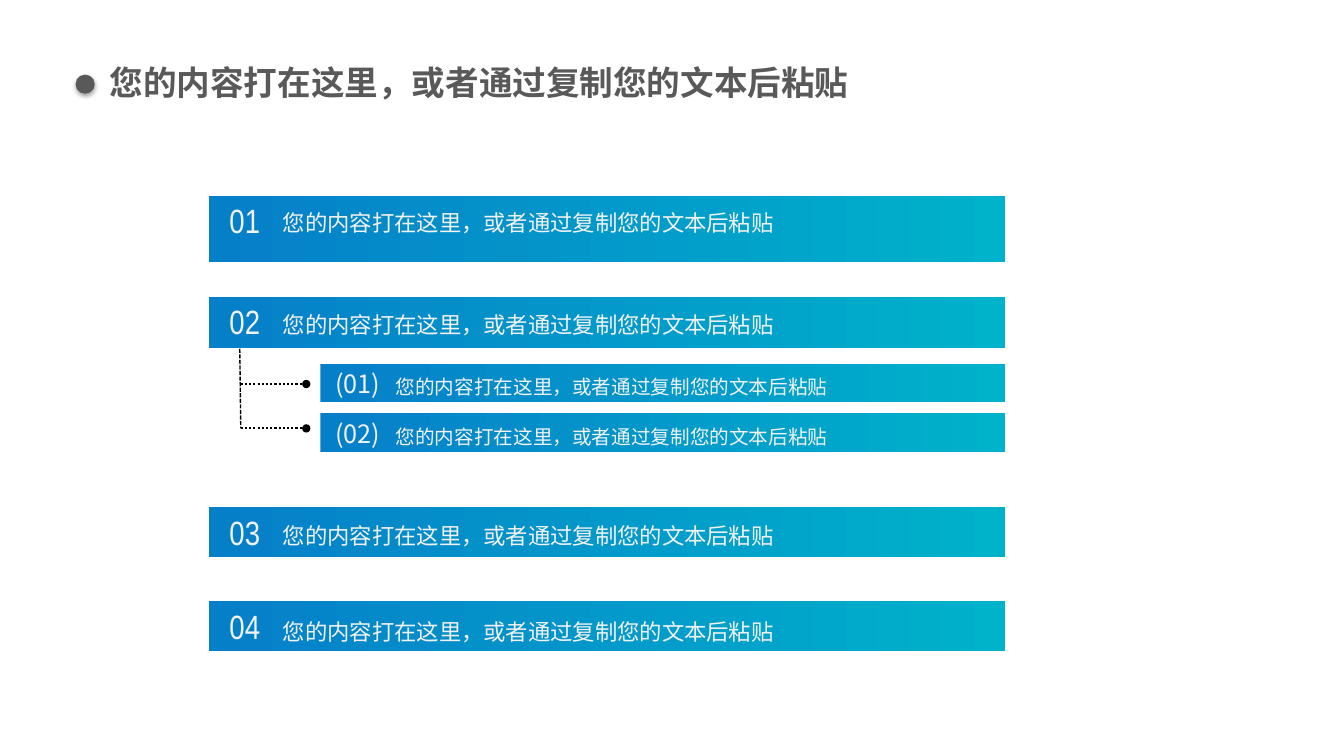
from lxml import etree
from pptx import Presentation
from pptx.dml.color import RGBColor
from pptx.enum.dml import MSO_LINE
from pptx.enum.shapes import MSO_CONNECTOR, MSO_SHAPE
from pptx.enum.text import MSO_AUTO_SIZE, PP_ALIGN
from pptx.oxml.ns import qn
from pptx.util import Pt

PX = 9144  # 100 px to the inch
RECT, OVAL = MSO_SHAPE.RECTANGLE, MSO_SHAPE.OVAL
STRAIGHT = MSO_CONNECTOR.STRAIGHT
DOTTED, DASHED = MSO_LINE.ROUND_DOT, MSO_LINE.SQUARE_DOT
CENTER, LEFT = PP_ALIGN.CENTER, PP_ALIGN.LEFT
GROW = MSO_AUTO_SIZE.SHAPE_TO_FIT_TEXT

COLORS = {"blue": "067FC9", "teal": "00B2CA", "pale": "F2F2F2",
          "gray": "595959", "black": "000000"}
SANS, NARROW = "Noto Sans CJK SC", "Arial Narrow"
SENTENCE = "您的内容打在这里，或者通过复制您的文本后粘贴"


def rgb(name):
    return RGBColor.from_string(COLORS[name])


def write(frame, text, size, font=SANS, color="pale", bold=False,
          align=LEFT, spacing=None):
    paragraph = frame.paragraphs[0]
    paragraph.alignment = align
    if spacing:
        paragraph.line_spacing = Pt(spacing)
    run = paragraph.add_run()
    run.text = text
    run.font.size, run.font.bold = Pt(size), bold
    run.font.color.rgb = rgb(color)
    run.font.name = font
    etree.SubElement(run.font._element, qn("a:ea"), typeface=font)


class Deck:
    def __init__(self, width, height):
        self.deck = Presentation()
        self.deck.slide_width, self.deck.slide_height = width * PX, height * PX
        self.slide = self.deck.slides.add_slide(self.deck.slide_layouts[6])

    def shape(self, kind, *box):
        shape = self.slide.shapes.add_shape(kind, *(n * PX for n in box))
        shape.shadow.inherit = False
        shape.line.fill.background()
        return shape

    def bar(self, *box):
        fill = self.shape(RECT, *box).fill
        fill.gradient()
        fill.gradient_angle = 0
        for stop, color in zip(fill.gradient_stops, ("blue", "teal")):
            stop.color.rgb = rgb(color)

    def bullet(self, *box):
        dot = self.shape(OVAL, *box)
        dot.fill.solid()
        dot.fill.fore_color.rgb = rgb("gray")
        effects = dot._element.spPr.find(qn("a:effectLst"))
        shadow = etree.SubElement(effects, qn("a:outerShdw"), blurRad=str(Pt(3.1)),
                                  dist=str(Pt(1.8)), dir="5400000", rotWithShape="0")
        tint = etree.SubElement(shadow, qn("a:srgbClr"), val=COLORS["black"])
        etree.SubElement(tint, qn("a:alpha"), val="35000")

    def text(self, left, top, width, height, text, **style):
        box = self.slide.shapes.add_textbox(*(n * PX for n in (left, top, width, height)))
        box.text_frame.word_wrap = True
        box.text_frame.auto_size = GROW
        write(box.text_frame, text, **style)

    def line(self, *ends, width, dash, dot_end=False):
        link = self.slide.shapes.add_connector(STRAIGHT, *(n * PX for n in ends))
        link.line.color.rgb = rgb("black")
        link.line.width = Pt(width)
        link.line.dash_style = dash
        if dot_end:
            etree.SubElement(link.line._get_or_add_ln(), qn("a:tailEnd"), type="oval")
        etree.SubElement(link._element.spPr, qn("a:effectLst"))

    def save(self):
        self.deck.save("out.pptx")


def main():
    page = Deck(1334, 750)

    # Main items: number, bar top, bar height, number top, sentence top
    for number, top, height, number_top, sentence_top in (
            ("01", 194, 66, 193, 202), ("02", 295, 50, 294, 303),
            ("03", 503, 50, 503, 512), ("04", 596, 50, 596, 607)):
        page.bar(207, top, 791, height)
        page.text(198, number_top, 90, 50, number, size=24, font=NARROW, align=CENTER)
        page.text(271, sentence_top, 680, 36, SENTENCE, size=16, spacing=19.8)

    # Sub-items of 02
    for number, top in (("(01)", 361), ("(02)", 410)):
        page.bar(318, top, 680, 38)
        page.text(310, top, 90, 40, number, size=18, align=CENTER)
        page.text(383, top + 2, 530, 36, SENTENCE, size=14, spacing=19.8)

    # Branch from 02 to its sub-items
    for level in (381, 425):
        page.line(239, level, 304, level, width=1.5, dash=DOTTED, dot_end=True)
    page.line(238, 346, 239, 425, width=1, dash=DASHED)

    # Heading
    page.text(99, 57, 891, 50, SENTENCE, size=24, color="gray", bold=True)
    page.bullet(75, 74, 19, 19)

    page.save()


if __name__ == "__main__":
    main()
